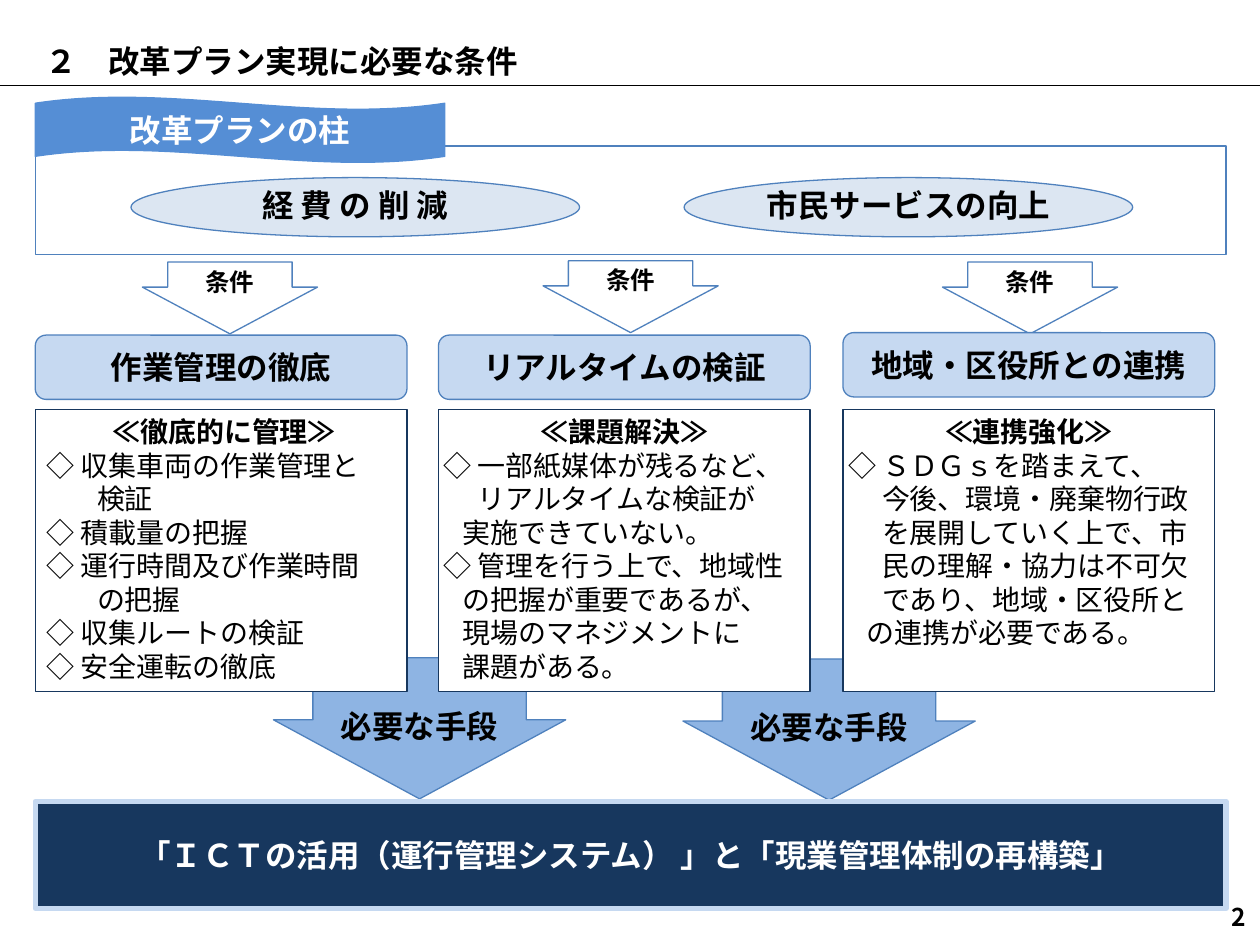
from lxml import etree
from pptx import Presentation
from pptx.dml.color import RGBColor
from pptx.enum.shapes import MSO_CONNECTOR, MSO_SHAPE
from pptx.enum.text import MSO_ANCHOR, PP_ALIGN
from pptx.oxml.ns import qn
from pptx.util import Inches, Pt

RECTANGLE, ROUNDED = MSO_SHAPE.RECTANGLE, MSO_SHAPE.ROUNDED_RECTANGLE
ELLIPSE, WAVE, DOWN_ARROW = MSO_SHAPE.OVAL, MSO_SHAPE.WAVE, MSO_SHAPE.DOWN_ARROW
STRAIGHT = MSO_CONNECTOR.STRAIGHT
TOP, MIDDLE = MSO_ANCHOR.TOP, MSO_ANCHOR.MIDDLE
LEFT, CENTER, RIGHT = PP_ALIGN.LEFT, PP_ALIGN.CENTER, PP_ALIGN.RIGHT

BLACK, WHITE, NAVY, BLUE = "000000", "FFFFFF", "17375E", "4F81BD"
PALE, LIGHT, MEDIUM, STRONG = "DCE6F2", "C6D9F1", "8EB4E3", "558ED5"


def rgb(value):
    return RGBColor.from_string(value)


class SlideBuilder:
    font_name = "Noto Sans CJK JP"
    line_width = 0.75

    def __init__(self, slide):
        self.slide = slide

    def add_paragraph(self, frame, text, size, color=BLACK, bold=True, align=CENTER):
        first = frame.paragraphs[0]
        paragraph = first if not first.runs else frame.add_paragraph()
        paragraph.alignment = align
        run = paragraph.add_run()
        run.text = text
        formats = {"name": self.font_name, "size": Pt(size), "bold": bold}
        for name, value in formats.items():
            setattr(run.font, name, value)
        run.font.color.rgb = rgb(color)
        east_asian = etree.SubElement(run._r.get_or_add_rPr(), qn("a:ea"))
        east_asian.set("typeface", self.font_name)
        return paragraph

    def set_frame(self, frame, anchor=MIDDLE, margins=(0.1, 0.05, 0.1, 0.05), wrap=True):
        """Set anchor, wrapping and margins (left, top, right, bottom, in inches)."""
        frame.word_wrap = wrap
        frame.vertical_anchor = anchor
        for side, value in zip(("left", "top", "right", "bottom"), margins):
            setattr(frame, f"margin_{side}", Inches(value))

    def shape(self, kind, box, fill, line, width=line_width, adjustments=()):
        shape = self.slide.shapes.add_shape(kind, *map(Inches, box))
        shape.shadow.inherit = False
        shape.fill.solid()
        shape.fill.fore_color.rgb = rgb(fill)
        shape.line.color.rgb = rgb(line)
        shape.line.width = Pt(width)
        for index, value in enumerate(adjustments):
            shape.adjustments[index] = value
        return shape

    def label(self, shape, text, size=18, color=BLACK, **frame_format):
        self.set_frame(shape.text_frame, **frame_format)
        self.add_paragraph(shape.text_frame, text, size, color)

    def text_box(self, box, text, size, align, **frame_format):
        frame = self.slide.shapes.add_textbox(*map(Inches, box)).text_frame
        self.set_frame(frame, **frame_format)
        self.add_paragraph(frame, text, size, align=align)

    def rule(self, start, end):
        connector = self.slide.shapes.add_connector(STRAIGHT, *map(Inches, start + end))
        connector.line.color.rgb = rgb(BLACK)
        connector.line.width = Pt(self.line_width)
        etree.SubElement(connector._element.spPr, qn("a:effectLst"))

    def detail_box(self, box, heading, lines, margin):
        """Add a heading and its lines, each given as (indent in inches, text)."""
        frame = self.shape(RECTANGLE, box, WHITE, NAVY).text_frame
        self.set_frame(frame, anchor=TOP, margins=(margin, 0.04, 0.04, 0.04))
        self.add_paragraph(frame, heading, 16)
        for indent, text in lines:
            paragraph = self.add_paragraph(frame, text, 16, bold=False, align=LEFT)
            properties = paragraph._p.get_or_add_pPr()
            properties.set("marL", str(Inches(indent)))
            properties.set("indent", "0")
        for paragraph in frame.paragraphs:
            paragraph.line_spacing = Pt(19.2)


# left, arrow left, arrow top, title top, title, heading, text margin, lines
CONDITIONS = [
    (0.28, 1.13, 2.08, 2.66, "作業管理の徹底", "≪徹底的に管理≫", 0.09, [
        (0, "◇ 収集車両の作業管理と"),
        (0.4, "検証"),
        (0, "◇ 積載量の把握"),
        (0, "◇ 運行時間及び作業時間"),
        (0.4, "の把握"),
        (0, "◇ 収集ルートの検証"),
        (0, "◇ 安全運転の徹底"),
    ]),
    (3.48, 4.31, 2.07, 2.66, "リアルタイムの検証", "≪課題解決≫", 0.04, [
        (0, "◇ 一部紙媒体が残るなど、"),
        (0.27, "リアルタイムな検証が"),
        (0.15, "実施できていない。"),
        (0, "◇ 管理を行う上で、地域性"),
        (0.15, "の把握が重要であるが、"),
        (0.15, "現場のマネジメントに"),
        (0.15, "課題がある。"),
    ]),
    (6.69, 7.48, 2.08, 2.64, "地域・区役所との連携", "≪連携強化≫", 0.04, [
        (0, "◇ ＳＤＧｓを踏まえて、"),
        (0.27, "今後、環境・廃棄物行政"),
        (0.27, "を展開していく上で、市"),
        (0.27, "民の理解・協力は不可欠"),
        (0.27, "であり、地域・区役所と"),
        (0.15, "の連携が必要である。"),
    ]),
]


def main():
    presentation = Presentation()
    presentation.slide_width = Inches(10)
    presentation.slide_height = Inches(7.5)
    slide = presentation.slides.add_slide(presentation.slide_layouts[6])
    builder = SlideBuilder(slide)

    builder.rule((0, 0.68), (10, 0.68))
    builder.text_box((0.01, 0, 9.99, 0.68), "２　改革プラン実現に必要な条件", 18, LEFT,
                     margins=(0.35, 0.33, 0.1, 0.05))
    builder.text_box((9.48, 7.08, 0.51, 0.39), "2", 14, RIGHT)

    for left, top in ((2.17, 5.22), (5.42, 5.23)):
        arrow = builder.shape(DOWN_ARROW, (left, top, 2.32, 1.12), MEDIUM, BLUE,
                              adjustments=(0.73, 0.56))
        builder.label(arrow, "必要な手段", anchor=TOP, margins=(0.1, 0.39, 0.1, 0))

    conclusion = builder.shape(RECTANGLE, (0.28, 6.36, 9.45, 0.85), NAVY, LIGHT, width=3)
    builder.label(conclusion, "「ＩＣＴの活用（運行管理システム） 」と「現業管理体制の再構築」",
                  color=WHITE)

    builder.shape(RECTANGLE, (0.28, 1.16, 9.45, 0.86), WHITE, BLUE)
    ribbon = builder.shape(WAVE, (0.28, 0.77, 3.25, 0.52), STRONG, STRONG,
                           adjustments=(0.095, 0))
    builder.label(ribbon, "改革プランの柱", color=WHITE, margins=(0, 0, 0, 0))
    for left, pillar in ((1.04, "経 費 の 削 減"), (5.43, "市民サービスの向上")):
        ellipse = builder.shape(ELLIPSE, (left, 1.41, 3.56, 0.47), PALE, BLUE)
        builder.label(ellipse, pillar, margins=(0, 0, 0, 0.04))

    for left, arrow_left, arrow_top, title_top, title, heading, margin, lines in CONDITIONS:
        arrow = builder.shape(DOWN_ARROW, (arrow_left, arrow_top, 1.39, 0.57), WHITE, BLUE,
                              adjustments=(0.71, 0.65))
        builder.label(arrow, "条件", size=14, margins=(0, 0, 0, 0))
        title_box = builder.shape(ROUNDED, (left, title_top, 2.95, 0.51), LIGHT, BLUE)
        builder.label(title_box, title)
        builder.detail_box((left, 3.25, 2.95, 2.24), heading, lines, margin)

    presentation.save("out.pptx")


if __name__ == "__main__":
    main()
